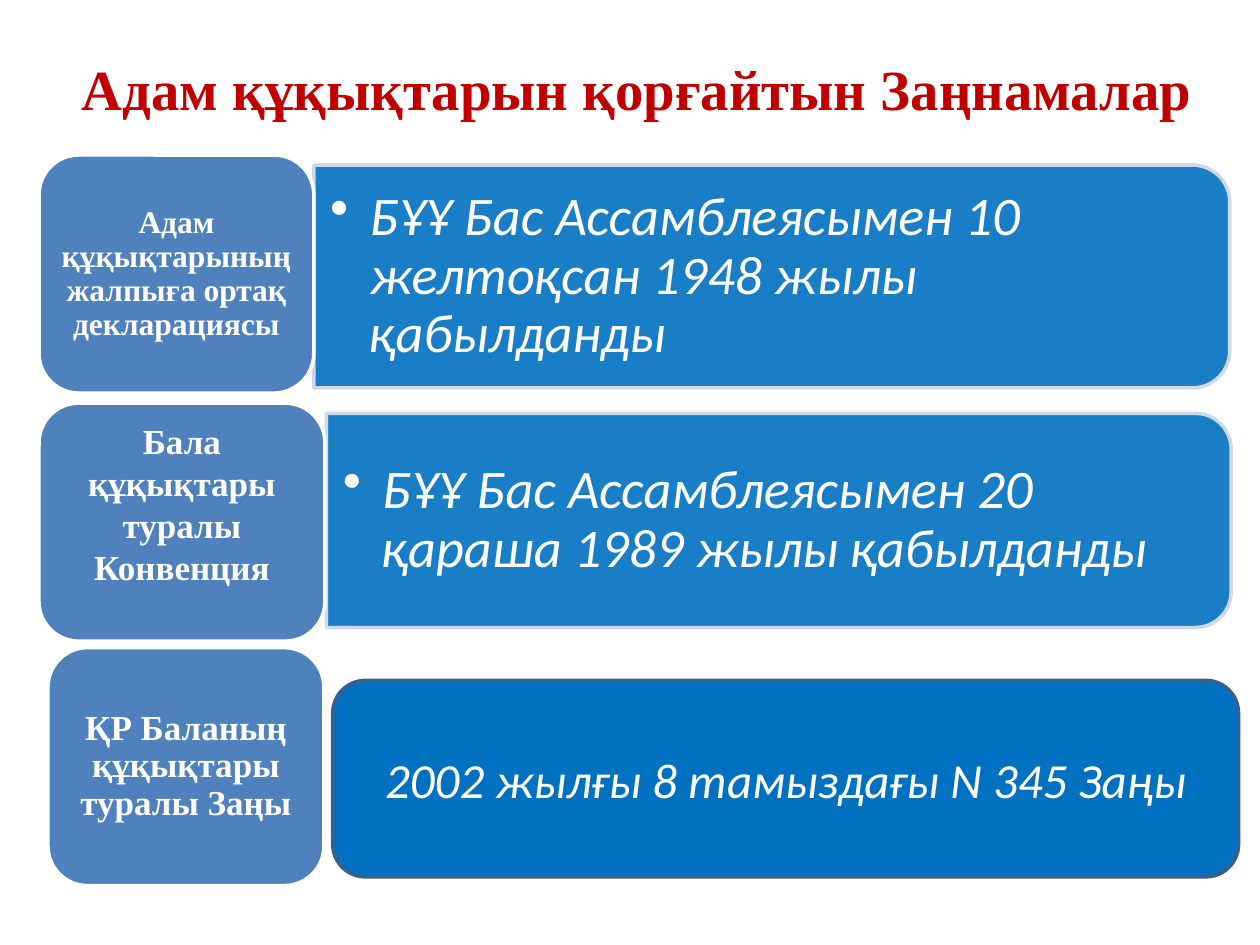
import lxml.etree
import pptx
import pptx.dml.color
import pptx.enum.shapes
import pptx.enum.text
import pptx.oxml.ns
import pptx.util

Pt = pptx.util.Pt
SHAPES = pptx.enum.shapes.MSO_SHAPE
ALIGN = pptx.enum.text.PP_ALIGN
MIDDLE = pptx.enum.text.MSO_ANCHOR.MIDDLE

COLOURS = {"title": "C00000", "label": "4F81BD", "panel": "0070C0",
           "white": "FFFFFF", "panel line": "D0D8E8", "law line": "3A5F8C"}
TITLE = ("Адам құқықтарын қорғайтын Заңнамалар", (36, 21.6, 656, 56.9))
TITLE_FONT = {"name": "Times New Roman", "size": Pt(32.4), "bold": True}
PANEL_FONT = {"name": "Calibri", "size": Pt(31), "italic": True}
LAW_FONT = {**PANEL_FONT, "size": Pt(28)}

LABEL_HEIGHT = 136
# text, left, top, width, text size, line spacing, bottom inset
LABELS = [
    ("Адам құқықтарының жалпыға ортақ декларациясы", 22.3, 88.6, 157, 18, 0.9, 3),
    ("Бала құқықтары туралы Конвенция", 22.3, 230.4, 163.4, 20, 1, 24),
    ("ҚР Баланың құқықтары туралы Заңы", 27.4, 370.1, 157.7, 20, 0.9, 3),
]
PANELS = [
    ("БҰҰ Бас Ассамблеясымен 10 желтоқсан 1948 жылы қабылданды",
     (179.3, 94.3, 523.4, 127.4)),
    ("БҰҰ Бас Ассамблеясымен 20 қараша 1989 жылы қабылданды",
     (186.5, 236.2, 517, 122.4)),
]
LAW = ("2002 жылғы 8 тамыздағы N 345 Заңы", (190.1, 388.8, 517.7, 112.3))


def rgb(name):
    return pptx.dml.color.RGBColor.from_string(COLOURS[name])


def set_alpha(colour_format, percent):
    """Make a solid fill partly transparent."""
    colour = colour_format._xPr.find(".//" + pptx.oxml.ns.qn("a:srgbClr"))
    lxml.etree.SubElement(colour, pptx.oxml.ns.qn("a:alpha"), val=str(percent * 1000))


def add_box(page, kind, place, fill, line):
    box = page.shapes.add_shape(kind, *map(Pt, place))
    box.shadow.inherit = False
    box.fill.solid()
    box.fill.fore_color.rgb = rgb(fill)
    box.line.color.rgb = rgb(line)
    box.line.width = Pt(2)
    return box


def write(box, text, font, colour="white", insets=(7.2, 3.6, 7.2, 3.6),
          align=ALIGN.CENTER, spacing=1):
    frame = box.text_frame
    frame.word_wrap = True
    frame.vertical_anchor = MIDDLE
    for side, inset in zip(("left", "top", "right", "bottom"), insets):
        setattr(frame, "margin_" + side, Pt(inset))
    para = frame.paragraphs[0]
    para.alignment = align
    para.line_spacing = spacing
    span = para.add_run()
    span.text = text
    for key, value in font.items():
        setattr(span.font, key, value)
    span.font.color.rgb = rgb(colour)
    return para


def add_bullet(para, indent):
    properties = para._p.get_or_add_pPr()
    properties.set("marL", str(Pt(indent)))
    properties.set("indent", str(-Pt(indent)))
    lxml.etree.SubElement(properties, pptx.oxml.ns.qn("a:buChar"), char="•")


def add_panel(page, text, place):
    """Panel rounded on the right: a top-rounded shape turned by 90 degrees."""
    left, top, width, height = place
    shift = (width - height) / 2
    box = add_box(page, SHAPES.ROUND_2_SAME_RECTANGLE,
                  (left + shift, top - shift, height, width), "panel", "panel line")
    box.rotation = 90
    set_alpha(box.fill, 90)
    words = page.shapes.add_textbox(*map(Pt, (left, top + 6, width - 6, height - 12)))
    para = write(words, text, PANEL_FONT, insets=(9.4, 4.3, 9.4, 4.3),
                 align=ALIGN.LEFT, spacing=0.9)
    add_bullet(para, 22.5)


def main():
    deck = pptx.Presentation()
    deck.slide_width, deck.slide_height = Pt(720), Pt(540)
    page = deck.slides.add_slide(deck.slide_layouts[6])

    text, place = TITLE
    write(page.shapes.add_textbox(*map(Pt, place)), text, TITLE_FONT, "title")
    for text, place in PANELS:
        add_panel(page, text, place)
    for text, left, top, width, size, spacing, bottom in LABELS:
        box = add_box(page, SHAPES.ROUNDED_RECTANGLE,
                      (left, top, width, LABEL_HEIGHT), "label", "white")
        write(box, text, {**TITLE_FONT, "size": Pt(size)},
              insets=(5.4, 3, 5.4, bottom), spacing=spacing)
    text, place = LAW
    box = add_box(page, SHAPES.ROUNDED_RECTANGLE, place, "panel", "law line")
    write(box, text, LAW_FONT)
    deck.save("out.pptx")


if __name__ == "__main__":
    main()
